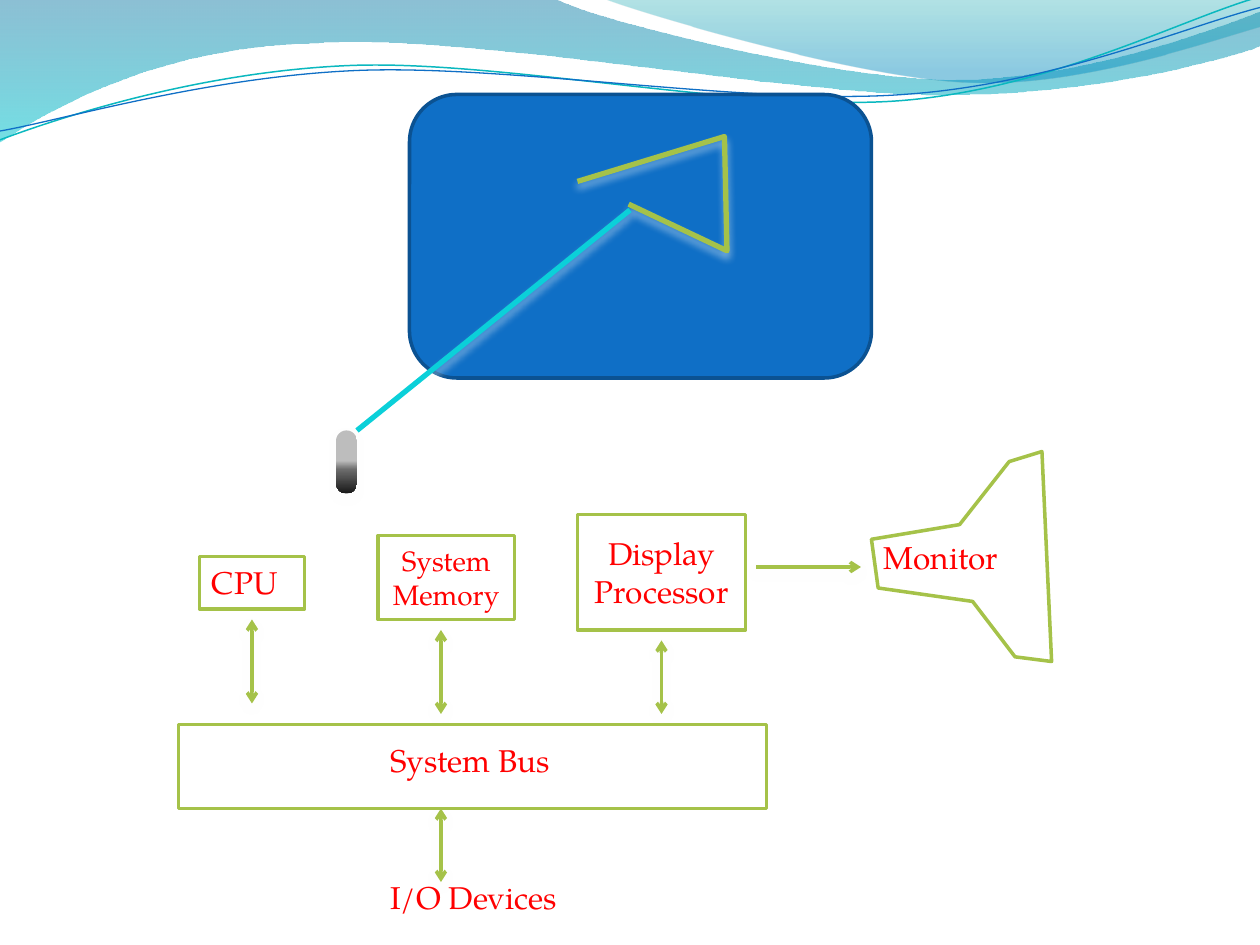
from dataclasses import dataclass
from math import cos, radians, sin

from lxml import etree
from pptx import Presentation
from pptx.dml.color import RGBColor
from pptx.enum.shapes import MSO_CONNECTOR, MSO_SHAPE
from pptx.enum.text import MSO_ANCHOR, PP_ALIGN
from pptx.oxml.ns import qn
from pptx.util import Inches, Pt

RECT = MSO_SHAPE.RECTANGLE
ROUNDED = MSO_SHAPE.ROUNDED_RECTANGLE
DISK = MSO_SHAPE.FLOWCHART_MAGNETIC_DISK
STRAIGHT = MSO_CONNECTOR.STRAIGHT
LEFT, CENTER = PP_ALIGN.LEFT, PP_ALIGN.CENTER
TOP, MIDDLE = MSO_ANCHOR.TOP, MSO_ANCHOR.MIDDLE

FONT = "TeX Gyre Pagella"
GREEN, BLUE, CYAN, RED, WHITE = "A5C249", "0F6FC6", "0BD0D9", "FF0000", "FFFFFF"
CELL = 1 / 12
TILT = 357.3


@dataclass
class Box:
    left: float
    top: float
    unit: float

    def point(self, col, row):
        return (Inches(self.left + col * self.unit), Inches(self.top + row * self.unit))

    def area(self, col, row, cols, rows):
        return (*self.point(col, row), Inches(cols * self.unit), Inches(rows * self.unit))


def rgb(color):
    return RGBColor.from_string(color)


def add_color(parent, color, alpha=100):
    node = etree.SubElement(parent, qn("a:srgbClr"), val=color)
    if alpha < 100:
        etree.SubElement(node, qn("a:alpha"), val=str(alpha * 1000))


def set_gradient(shape, stops):
    shape.fill.gradient()
    shape.fill.gradient_angle = 270
    stop_list = shape._element.spPr.find(qn("a:gradFill")).find(qn("a:gsLst"))
    for stop in list(stop_list):
        stop_list.remove(stop)
    for place, color, alpha in stops:
        stop = etree.SubElement(stop_list, qn("a:gs"), pos=str(place * 1000))
        add_color(stop, color, alpha)


def set_shadow(shape, glows=False):
    effects = etree.SubElement(shape._element.spPr, qn("a:effectLst"))
    if glows:
        outer = etree.SubElement(effects, qn("a:outerShdw"), blurRad=str(Pt(4.5)),
                                 dist=str(Pt(3)), dir="5400000", rotWithShape="0")
        add_color(outer, WHITE, 48)


def style(shape, fill=None, line=None, width=2, glows=False):
    if isinstance(fill, list):
        set_gradient(shape, fill)
    elif fill:
        shape.fill.solid()
        shape.fill.fore_color.rgb = rgb(fill)
    else:
        shape.fill.background()
    if line:
        shape.line.color.rgb = rgb(line)
        shape.line.width = Pt(width)
    else:
        shape.line.fill.background()
    set_shadow(shape, glows)
    return shape


def add_outline(slide, points, closed=True, **look):
    builder = slide.shapes.build_freeform(*points[0], scale=1.0)
    builder.add_line_segments(points[1:], close=closed)
    return style(builder.convert_to_shape(), **look)


def add_wave(slide, box, start, pieces, **look):
    points = [box.point(*point) for point in [start, *(p for piece in pieces for p in piece)]]
    wave = add_outline(slide, points, **look)
    segments = wave._element.spPr.iter(qn("a:lnTo"))
    segments = iter(list(segments))
    for piece in pieces:
        first, *others = [next(segments) for _ in piece]
        if others:
            first.tag = qn("a:cubicBezTo")
            for segment in others:
                first.append(segment[0])
                segment.getparent().remove(segment)
    return wave


def level(point, center):
    across, down = point[0] - center[0], point[1] - center[1]
    turn = radians(360 - TILT)
    return (center[0] + across * cos(turn) - down * sin(turn),
            center[1] + across * sin(turn) + down * cos(turn))


def add_block(slide, kind, area, **look):
    return style(slide.shapes.add_shape(kind, *area), **look)


def add_line(slide, start, end, color=GREEN, width=2, heads=()):
    line = slide.shapes.add_connector(STRAIGHT, *start, *end)
    line.line.color.rgb = rgb(color)
    line.line.width = Pt(width)
    for head in heads:
        etree.SubElement(line.line._get_or_add_ln(), qn(f"a:{head}"), type="arrow")
    set_shadow(line, glows=True)


def write(shape, text, size=18, align=LEFT, anchor=MIDDLE, wrap=True):
    frame = shape.text_frame
    frame.word_wrap = wrap
    frame.vertical_anchor = anchor
    paragraph = frame.paragraphs[0]
    paragraph.alignment = align
    run = paragraph.add_run()
    run.text = text
    run.font.name = FONT
    run.font.size = Pt(size)
    run.font.color.rgb = rgb(RED)


def add_label(slide, area, text, wrap=True):
    write(slide.shapes.add_textbox(*area), text, anchor=TOP, wrap=wrap)


def draw_waves(slide, box):
    add_wave(slide, box, (0, 0), [
        [(4.4, -0.01)], [(4.76, 0.17), (6.64, 0.63), (7.58, 0.63)],
        [(8.53, 0.63), (9.58, 0.26), (10, 0.09)], [(10.01, 0.36)],
        [(9.83, 0.44), (8.7, 0.76), (7.46, 0.75)],
        [(6.22, 0.75), (3.82, 0.28), (2.57, 0.34)],
        [(1.29, 0.36), (0.46, 0.83), (-0.01, 1.13)], [(0, 0)],
    ], fill=[(0, "0074A1", 45), (100, "00C6CF", 55)])
    add_wave(slide, box, (4.79, -0.01), [
        [(5.09, 0.11), (6.82, 0.62), (7.69, 0.65)],
        [(8.56, 0.69), (9.61, 0.32), (10, 0.21)], [(10, 0)], [(4.79, -0.01)],
    ], fill=[(0, "00A1A9", 30), (80, "008BBF", 45)])
    ripples = [
        ((4.99, 0.58), (0, 1.11), [
            [(0.48, 0.93), (1.58, 0.57), (2.77, 0.52)],
            [(3.95, 0.47), (5.93, 0.89), (7.13, 0.8)],
            [(8.33, 0.71), (9.38, 0.15), (9.98, -0.02)]], "0AB8BF", 0.85),
        ((5, 0.59), (0, 1.04), [
            [(0.47, 0.96), (1.64, 0.61), (2.83, 0.56)],
            [(4.03, 0.51), (5.97, 0.84), (7.17, 0.75)],
            [(8.36, 0.67), (9.41, 0.21), (10, 0.06)]], BLUE, 0.75),
    ]
    for center, start, bends, color, width in ripples:
        flat = [[level(point, center) for point in bend] for bend in bends]
        ripple = add_wave(slide, box, level(start, center), flat, closed=False,
                          line=color, width=width)
        ripple.rotation = TILT


def draw_screen(slide, box):
    add_block(slide, ROUNDED, box.area(7, 0, 44, 27), fill=BLUE, line="0B5292")
    traced = [(23, 8.28), (37, 4), (37.24, 14.88), (27.88, 10.44)]
    add_outline(slide, [box.point(*corner) for corner in traced], closed=False,
                line=GREEN, width=3, glows=True)
    add_line(slide, box.point(28, 11), box.point(2, 32), color=CYAN, width=3)
    add_block(slide, DISK, box.area(0, 32, 2, 6), glows=True,
              fill=[(0, "BDBDBD", 100), (48, "BDBDBD", 100),
                    (62, "6C6C6C", 100), (100, "191919", 100)])


def draw_system(slide, box):
    frame = {"fill": WHITE, "line": GREEN}
    both = ("headEnd", "tailEnd")
    add_block(slide, RECT, box.area(2, 10, 10, 5), **frame)
    units = [((19, 8, 13, 8), "System Memory", 16),
             ((38, 6, 16, 11), "Display Processor", 18)]
    for cells, name, size in units:
        unit = add_block(slide, RECT, box.area(*cells), **frame)
        write(unit, name, size=size, align=CENTER)
    add_block(slide, RECT, box.area(0, 26, 56, 8), **frame)

    tube = [(66, 8.36), (66.64, 13), (75.64, 14.28), (79.68, 19.56),
            (83.16, 20), (82.24, 0), (79.12, 0.96), (74.4, 6.96)]
    monitor = add_outline(slide, [box.point(*corner) for corner in tube], **frame)
    write(monitor, "Monitor")

    add_label(slide, box.area(19, 27, 18, 4.8), "System Bus")
    add_label(slide, box.area(2, 10, 10, 4.8), "CPU")
    for col, start, end in [(7, 16, 24), (25, 17, 25), (46, 18, 25)]:
        add_line(slide, box.point(col, start), box.point(col, end), heads=both)
    add_line(slide, box.point(55, 11), box.point(65, 11), heads=both[1:])
    add_label(slide, box.area(19, 40, 18.84, 4.8), "I/O Devices", wrap=False)
    add_line(slide, box.point(25, 34), box.point(25, 41), heads=both)


def main():
    deck = Presentation()
    deck.slide_width, deck.slide_height = Inches(10), Inches(7.5)
    slide = deck.slides.add_slide(deck.slide_layouts[6])
    draw_waves(slide, Box(0, 0, 1))
    draw_screen(slide, Box(32 * CELL, 9 * CELL, CELL))
    draw_system(slide, Box(17 * CELL, 43 * CELL, CELL))
    deck.save("out.pptx")


if __name__ == "__main__":
    main()
